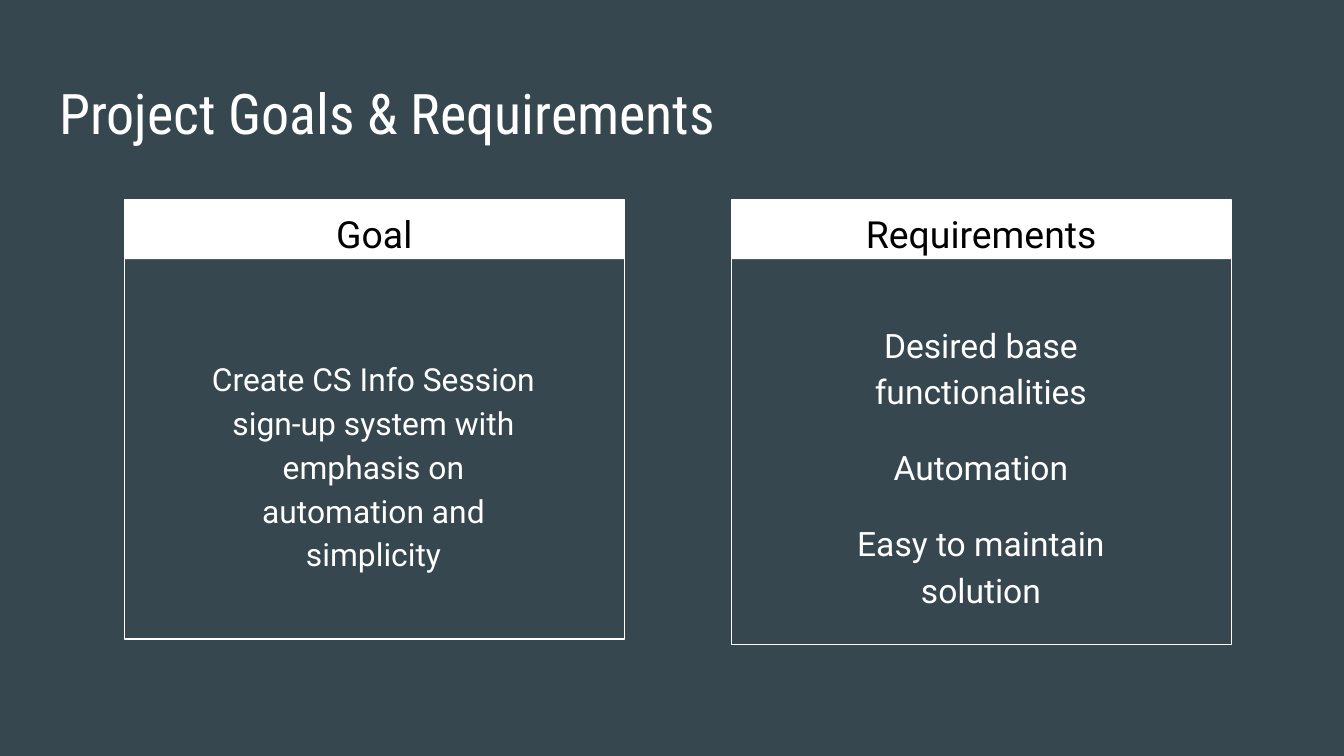
from pptx import Presentation
from pptx.dml.color import RGBColor
from pptx.enum import shapes, text
from pptx.util import Cm, Pt

SLATE = RGBColor(0x37, 0x47, 0x4F)
WHITE = RGBColor(0xFF, 0xFF, 0xFF)
BLACK = RGBColor(0x00, 0x00, 0x00)

CARD_TOP = 3.78
CARD_WIDTH = 9.45
HEADING_TOP = 3.61
HEADING_HEIGHT = 1.12
INSET = Cm(0.25)


def add_text(slide, box, paragraphs, size, color, font="Roboto",
             align=text.PP_ALIGN.CENTER, line_spacing=1.15, gap=0):
    """Add wrapped text; box is left, top, width, height in cm, gap in points."""
    frame = slide.shapes.add_textbox(*map(Cm, box)).text_frame
    frame.word_wrap = True
    frame.vertical_anchor = text.MSO_ANCHOR.TOP
    frame.margin_left = frame.margin_right = INSET
    frame.margin_top = frame.margin_bottom = INSET
    frame.text = "\n".join(paragraphs)
    for index, paragraph in enumerate(frame.paragraphs):
        paragraph.alignment = align
        paragraph.line_spacing = line_spacing
        paragraph.space_before = Pt(gap if index else 0)
        for run in paragraph.runs:
            run.font.name = font
            run.font.size = Pt(size)
            run.font.color.rgb = color


def add_rectangle(slide, left, height, filled):
    """Add a white band when filled, otherwise a white outline."""
    rectangle = slide.shapes.add_shape(
        shapes.MSO_SHAPE.RECTANGLE,
        Cm(left), Cm(CARD_TOP), Cm(CARD_WIDTH), Cm(height))
    rectangle.shadow.inherit = False
    if filled:
        rectangle.fill.solid()
        rectangle.fill.fore_color.rgb = WHITE
        rectangle.line.fill.background()
    else:
        rectangle.fill.background()
        rectangle.line.color.rgb = WHITE
        rectangle.line.width = Pt(0.75)


def add_card(slide, left, height, heading, body, body_box, body_size):
    add_rectangle(slide, left, HEADING_HEIGHT, filled=True)
    add_rectangle(slide, left, height, filled=False)
    add_text(slide, (left, HEADING_TOP, CARD_WIDTH, HEADING_HEIGHT),
             [heading], 20, BLACK)
    add_text(slide, body_box, body, body_size, WHITE, gap=16)


def main():
    deck = Presentation()
    deck.slide_width, deck.slide_height = Cm(25.4), Cm(14.29)
    slide = deck.slides.add_slide(deck.slide_layouts[6])
    slide.background.fill.solid()
    slide.background.fill.fore_color.rgb = SLATE

    add_text(slide, (0.87, 1.24, 23.67, 1.6), ["Project Goals & Requirements"],
             30, WHITE, font="Roboto Condensed",
             align=text.PP_ALIGN.LEFT, line_spacing=1.0)
    add_card(slide, 2.35, 8.3, "Goal",
             ["Create CS Info Session sign-up system with emphasis on "
              "automation and simplicity"],
             (3.63, 6.45, 6.86, 3.99), 17)
    add_card(slide, 13.82, 8.41, "Requirements",
             ["Desired base functionalities", "Automation",
              "Easy to maintain solution"],
             (14.78, 5.77, 7.52, 5.92), 18)
    deck.save("out.pptx")


if __name__ == "__main__":
    main()
